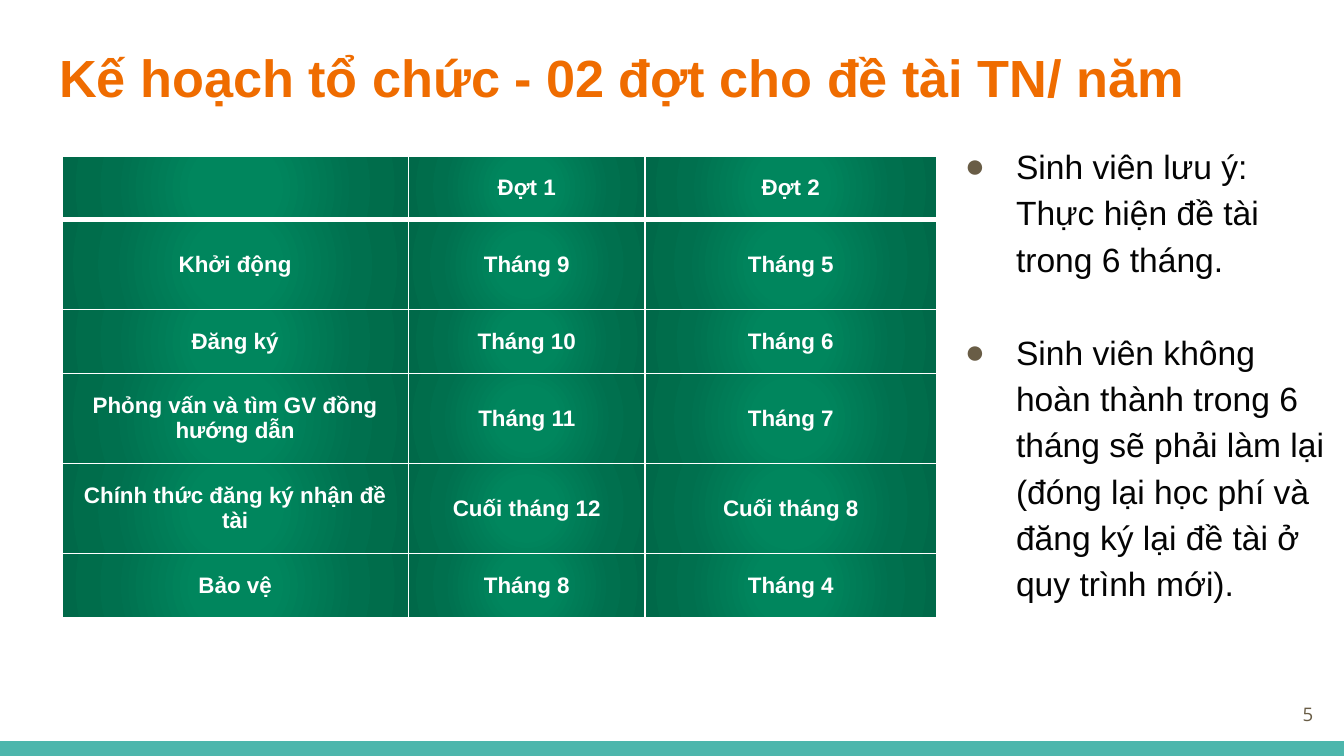
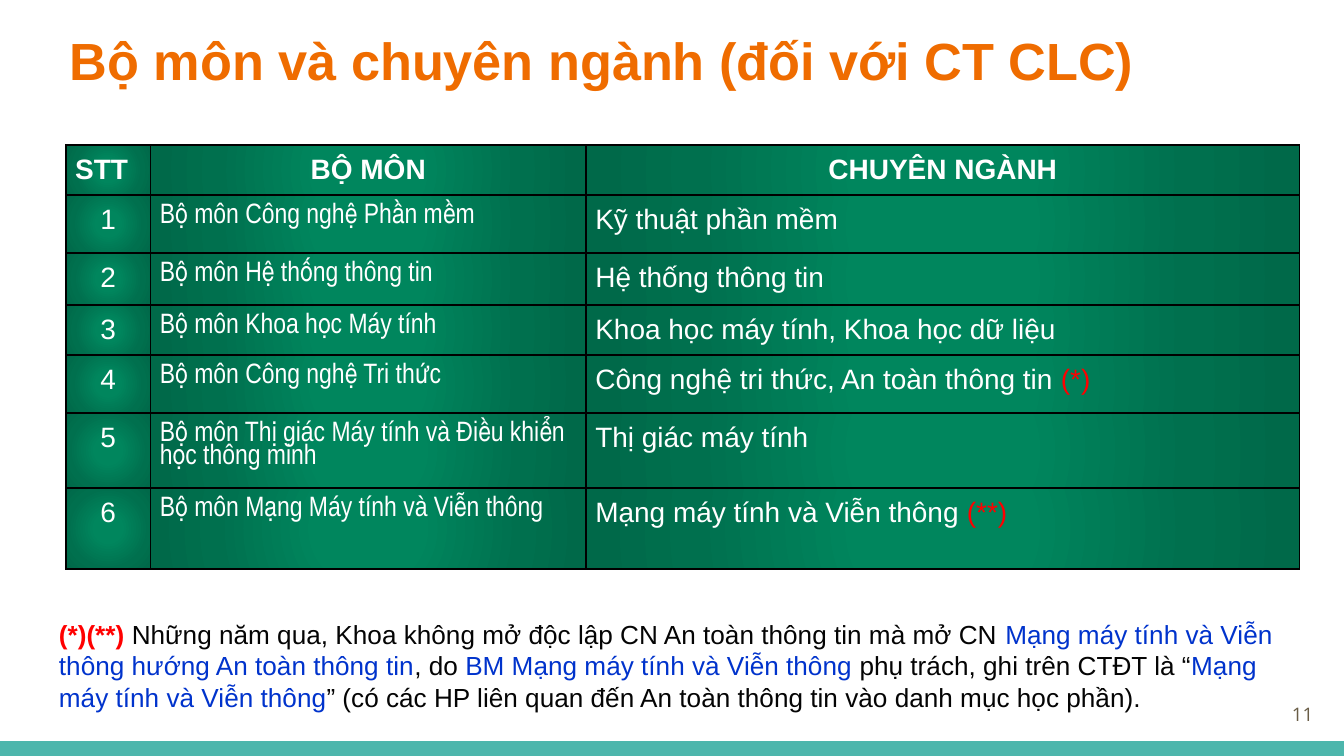
"""Builds two slides on thesis scheduling and on departments with their majors."""
from lxml.etree import SubElement, fromstring
from pptx import Presentation
from pptx.dml.color import RGBColor
from pptx.enum.shapes import MSO_SHAPE as SHAPE
from pptx.enum.text import MSO_ANCHOR as ANCHOR, MSO_AUTO_SIZE as AUTO, PP_ALIGN as ALIGN
from pptx.oxml.ns import nsdecls, qn
from pptx.util import Pt

PX = 4572
COLORS = {
    "orange": "EF6C00", "teal": "4DB6AC", "brown": "695D46", "ink": "040404",
    "white": "FFFFFF", "black": "000000", "red": "FF0000", "blue": "0033CC",
}
GREENS = {0: "00865D", 23: "00865D", 69: "00704E", 84: "006D4B", 97: "006949"}


def write(paragraph, runs, size, bold=False, font="Arial"):
    for text, color in runs:
        run = paragraph.add_run()
        run.text = text
        for key, value in {"size": Pt(size), "bold": bold, "name": font}.items():
            setattr(run.font, key, value)
        run.font.color.rgb = RGBColor.from_string(COLORS[color])


def add_grid(slide, left, top, widths, heights, greens, border, header_rule):
    frame = slide.shapes.add_table(len(heights), len(widths), left * PX, top * PX,
                                   sum(widths) * PX, sum(heights) * PX)
    grid = frame.table
    grid.horz_banding = False
    for column, width in zip(grid.columns, widths):
        column.width = width * PX
    for row, height in zip(grid.rows, heights):
        row.height = height * PX
    stops = "".join(f'<a:gs pos="{at * 1000}"><a:srgbClr val="{green}"/></a:gs>'
                    for at, green in greens.items())
    for index, row in enumerate(grid.rows):
        rules = {"lnL": 1, "lnR": 1, "lnT": header_rule if index == 1 else 1,
                 "lnB": header_rule if index == 0 else 1}
        for cell in row.cells:
            props = cell._tc.get_or_add_tcPr()
            for side, points in rules.items():
                line = SubElement(props, qn(f"a:{side}"), w=str(Pt(points)))
                SubElement(SubElement(line, qn("a:solidFill")), qn("a:srgbClr"), val=COLORS[border])
            props.append(fromstring(
                f'<a:gradFill {nsdecls("a")}><a:gsLst>{stops}</a:gsLst><a:path path="circle">'
                '<a:fillToRect l="50000" t="50000" r="50000" b="50000"/></a:path></a:gradFill>'))
    return grid


prs = Presentation()
prs.slide_width, prs.slide_height = 2000 * PX, 1125 * PX

slides = []
for layout, heading, left, top, number in [
    (1, "Kế hoạch tổ chức - 02 đợt cho đề tài TN/ năm", 68, 48, "5"),
    (5, "Bộ môn và chuyên ngành (đối với CT CLC)", 84, 22, "11"),
]:
    slide = prs.slides.add_slide(prs.slide_layouts[layout])
    slides.append(slide)
    title = slide.shapes.title
    title.left, title.top, title.width, title.height = [v * PX for v in (left, top, 1864, 154)]
    page = slide.shapes.add_textbox(1854 * PX, 1020 * PX, 120 * PX, 86 * PX)
    for box, anchor, align, text, style in [
        (title, ANCHOR.TOP, ALIGN.LEFT, (heading, "orange"), (28, True)),
        (page, ANCHOR.MIDDLE, ALIGN.RIGHT, (number, "brown"), (10, False, "Open Sans")),
    ]:
        frame = box.text_frame
        for key, value in {"auto_size": AUTO.NONE, "word_wrap": True, "vertical_anchor": anchor,
                           "margin_left": 20 * PX, "margin_right": 20 * PX,
                           "margin_top": 20 * PX, "margin_bottom": 20 * PX}.items():
            setattr(frame, key, value)
        frame.paragraphs[0].alignment = align
        write(frame.paragraphs[0], [text], *style)

plan, majors = slides

band = plan.shapes.add_shape(SHAPE.RECTANGLE, 0, 1103 * PX, 2000 * PX, 22 * PX)
band.shadow.inherit = False
band.fill.solid()
band.fill.fore_color.rgb = RGBColor.from_string(COLORS["teal"])
band.line.fill.background()
prs.slide_master.shapes.element.insert(2, band.element)

notes = plan.placeholders[1]
notes.left, notes.top, notes.width, notes.height = [v * PX for v in (1392, 188, 608, 748)]
frame = notes.text_frame
for key, value in {"auto_size": AUTO.NONE, "vertical_anchor": ANCHOR.TOP,
                   "margin_left": 20 * PX, "margin_right": 20 * PX,
                   "margin_top": 20 * PX, "margin_bottom": 20 * PX}.items():
    setattr(frame, key, value)
for index, (note, gap) in enumerate([
    ("Sinh viên lưu ý: Thực hiện đề tài trong 6 tháng.", 25),
    ("Sinh viên không hoàn thành trong 6 tháng sẽ phải làm lại "
     "(đóng lại học phí và đăng ký lại đề tài ở quy trình mới).", 0),
]):
    paragraph = frame.add_paragraph() if index else frame.paragraphs[0]
    for key, value in {"line_spacing": 1.15, "space_before": Pt(0), "space_after": Pt(gap)}.items():
        setattr(paragraph, key, value)
    props = paragraph._p.get_or_add_pPr()
    props.set("marL", str(100 * PX))
    props.set("indent", str(-76 * PX))
    SubElement(SubElement(props, qn("a:buClr")), qn("a:srgbClr"), val=COLORS["brown"])
    SubElement(props, qn("a:buFont"), typeface="Arial")
    SubElement(props, qn("a:buChar"), char="●")
    write(paragraph, [(note, "ink")], 18)

schedule = [
    ("", "Đợt 1", "Đợt 2"),
    ("Khởi động", "Tháng 9", "Tháng 5"),
    ("Đăng ký", "Tháng 10", "Tháng 6"),
    ("Phỏng vấn và tìm GV đồng hướng dẫn", "Tháng 11", "Tháng 7"),
    ("Chính thức đăng ký nhận đề tài", "Cuối tháng 12", "Cuối tháng 8"),
    ("Bảo vệ", "Tháng 8", "Tháng 4"),
]
grid = add_grid(plan, 92, 232, (516, 352, 434), (95, 134, 95, 134, 134, 95), GREENS, "white", 3)
for row, texts in zip(grid.rows, schedule):
    for cell, text in zip(row.cells, texts):
        cell.vertical_anchor = ANCHOR.MIDDLE
        paragraph = cell.text_frame.paragraphs[0]
        paragraph.alignment = ALIGN.CENTER
        if text:
            write(paragraph, [(text, "white")], 12, True)

departments = [
    ("STT", "BỘ MÔN", "CHUYÊN NGÀNH", ""),
    ("1", "Bộ môn Công nghệ Phần mềm", "Kỹ thuật phần mềm", ""),
    ("2", "Bộ môn Hệ thống thông tin", "Hệ thống thông tin", ""),
    ("3", "Bộ môn Khoa học Máy tính", "Khoa học máy tính, Khoa học dữ liệu", ""),
    ("4", "Bộ môn Công nghệ Tri thức", "Công nghệ tri thức, An toàn thông tin ", "(*)"),
    ("5", "Bộ môn Thị giác Máy tính và Điều khiển học thông minh", "Thị giác máy tính", ""),
    ("6", "Bộ môn Mạng Máy tính và Viễn thông", "Mạng máy tính và Viễn thông ", "(**)"),
]
plain_greens = {at: green for at, green in GREENS.items() if at != 84}
grid = add_grid(majors, 98, 216, (126, 648, 1062), (74, 86, 78, 74, 86, 112, 120),
                plain_greens, "black", 1)
for index, (row, (*texts, mark)) in enumerate(zip(grid.rows, departments)):
    header = index == 0
    for column, (cell, text) in enumerate(zip(row.cells, texts)):
        for side in ("left", "right", "top", "bottom"):
            setattr(cell, f"margin_{side}", 14 * PX)
        paragraph = cell.text_frame.paragraphs[0]
        paragraph.alignment = ALIGN.CENTER if header == (column > 0) else ALIGN.LEFT
        narrow = column == 1 and not header
        if narrow:
            paragraph.line_spacing, paragraph.space_before = 0.9, Pt(18)
        write(paragraph, [(text, "white")], 15, header, "Arial Narrow" if narrow else "Arial")
    if mark:
        write(paragraph, [(mark, "red")], 15)

footnote = majors.shapes.add_textbox(68 * PX, 910 * PX, 1864 * PX, 162 * PX).text_frame
footnote.word_wrap = True
write(footnote.paragraphs[0], [("(*)(**) ", "red")], 14, True)
write(footnote.paragraphs[0], [
    ("Những năm qua, Khoa không mở độc lập CN An toàn thông tin mà mở CN ", "ink"),
    ("Mạng máy tính và Viễn thông hướng An toàn thông tin", "blue"),
    (", do ", "ink"),
    ("BM Mạng máy tính và Viễn thông ", "blue"),
    ("phụ trách, ghi trên CTĐT là “", "ink"),
    ("Mạng máy tính và Viễn thông", "blue"),
    ("” (có các HP liên quan đến An toàn thông tin vào danh mục học phần).", "ink"),
], 14)

prs.save("out.pptx")
